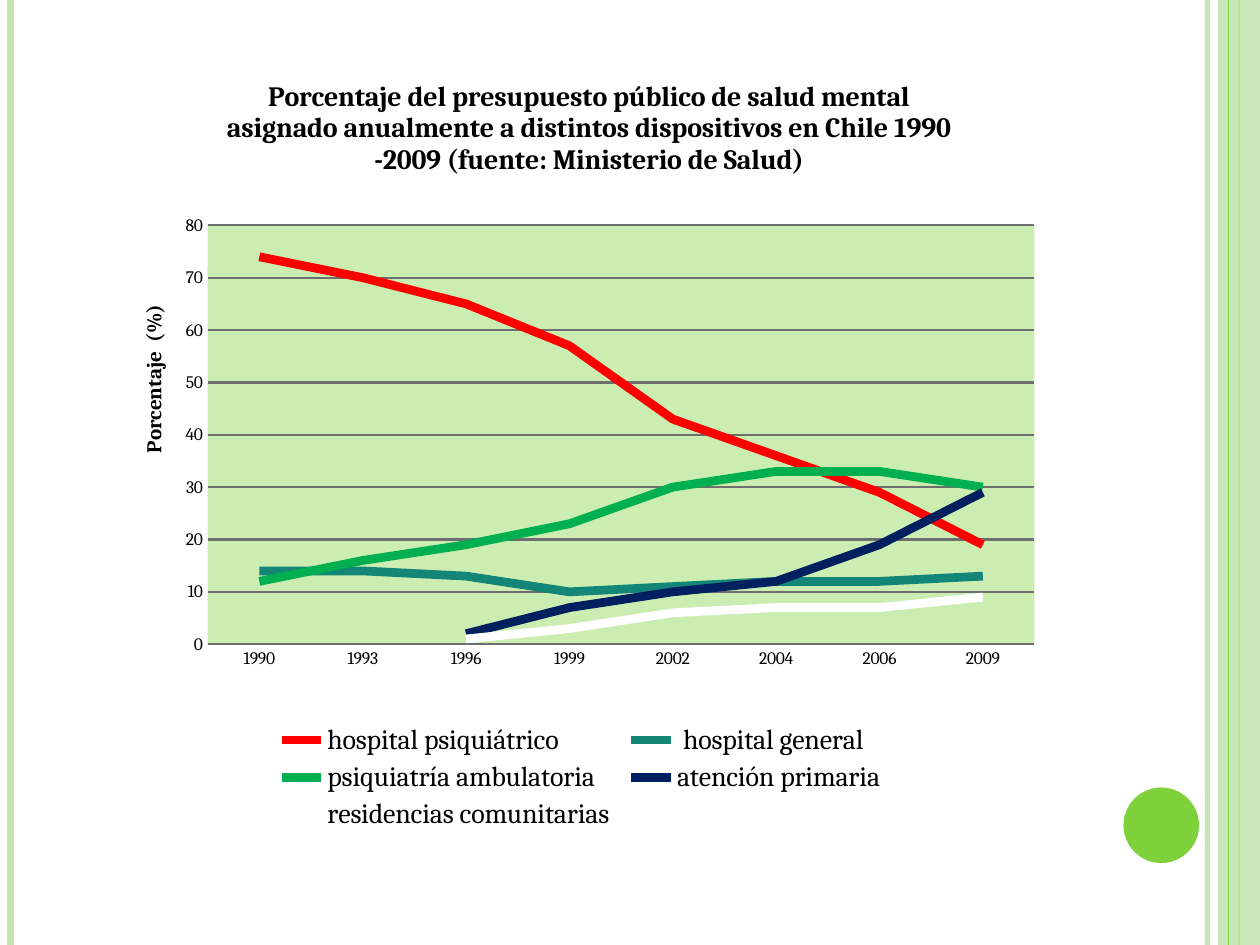
from lxml import etree
from pptx import Presentation
from pptx.chart.data import CategoryChartData
from pptx.dml.color import RGBColor
from pptx.enum.chart import XL_CHART_TYPE, XL_LEGEND_POSITION, XL_MARKER_STYLE, XL_TICK_MARK
from pptx.enum.shapes import MSO_CONNECTOR, MSO_SHAPE
from pptx.oxml import parse_xml
from pptx.oxml.ns import qn
from pptx.util import Pt

LINE_CHART = XL_CHART_TYPE.LINE
BOTTOM = XL_LEGEND_POSITION.BOTTOM
NO_MARKER = XL_MARKER_STYLE.NONE
NO_TICK = XL_TICK_MARK.NONE
STRAIGHT = MSO_CONNECTOR.STRAIGHT
RECT, OVAL = MSO_SHAPE.RECTANGLE, MSO_SHAPE.OVAL

WIDTH, HEIGHT = 720, 540
FONT = "Cambria"
COLORS = {
    "pale": "C0E5AF", "green": "7FD13B", "plot": "CCEDB1", "grid": "6E6E6E",
    "text": "000000", "red": "FF0000", "teal": "138677", "leaf": "00B050",
    "navy": "002060", "white": "FFFFFF",
}
NS = ('xmlns:c="http://schemas.openxmlformats.org/drawingml/2006/chart" '
      'xmlns:a="http://schemas.openxmlformats.org/drawingml/2006/main"')

TITLE = ("Porcentaje del presupuesto público de salud mental asignado anualmente "
         "a distintos dispositivos en Chile 1990 -2009 (fuente: Ministerio de Salud)")
AXIS_TITLE = "Porcentaje  (%)"
YEARS = ["1990", "1993", "1996", "1999", "2002", "2004", "2006", "2009"]
SERVICES = [
    ("hospital psiquiátrico", "red", [74, 70, 65, 57, 43, 36, 29, 19]),
    (" hospital general", "teal", [14, 14, 13, 10, 11, 12, 12, 13]),
    ("psiquiatría ambulatoria", "leaf", [12, 16, 19, 23, 30, 33, 33, 30]),
    ("atención primaria", "navy", [None, None, 2, 7, 10, 12, 19, 29]),
    ("residencias comunitarias", "white", [None, None, 1, 3, 6, 7, 7, 9]),
]


class SlideBuilder:
    def __init__(self, slide):
        self.slide = slide

    def color(self, key):
        return RGBColor.from_string(COLORS[key])

    def font(self, font, size, bold=False):
        font.name, font.size, font.bold = FONT, Pt(size), bold
        font.color.rgb = self.color("text")

    def opacity(self, element, percent):
        rgb = next(element.iter(qn("a:srgbClr")))
        etree.SubElement(rgb, qn("a:alpha")).set("val", str(percent * 1000))

    def stripe(self, x, width, key, percent=100):
        line = self.slide.shapes.add_connector(STRAIGHT, Pt(x), 0, Pt(x), Pt(HEIGHT))
        line.line.width = Pt(width)
        line.line.color.rgb = self.color(key)
        if percent < 100:
            self.opacity(line.line._ln, percent)
        etree.SubElement(line._element.spPr, qn("a:effectLst"))

    def shape(self, kind, x, y, w, h, key, percent=100):
        shape = self.slide.shapes.add_shape(kind, Pt(x), Pt(y), Pt(w), Pt(h))
        shape.shadow.inherit = False
        shape.fill.solid()
        shape.fill.fore_color.rgb = self.color(key)
        shape.line.fill.background()
        if percent < 100:
            self.opacity(shape._element.spPr, percent)

    def layout(self, parent, index, x, y, w=None, h=None, target=""):
        """Place a chart part by fractions of the chart area."""
        for old in parent.findall(qn("c:layout")):
            parent.remove(old)
        inner = f'<c:layoutTarget val="{target}"/>' if target else ""
        inner += '<c:xMode val="edge"/><c:yMode val="edge"/>'
        for tag, value in zip("xywh", (x, y, w, h)):
            if value is not None:
                inner += f'<c:{tag} val="{value}"/>'
        parent.insert(index, parse_xml(
            f"<c:layout {NS}><c:manualLayout>{inner}</c:manualLayout></c:layout>"))

    def title(self, title, text, size, x, y):
        frame = title.text_frame
        frame.text = text
        self.font(frame.paragraphs[0].runs[0].font, size, bold=True)
        self.layout(title._element, 1, x, y)

    def line_chart(self, x, y, w, h):
        data = CategoryChartData()
        data.categories = YEARS
        for name, _, values in SERVICES:
            data.add_series(name, values)
        chart = self.slide.shapes.add_chart(
            LINE_CHART, Pt(x), Pt(y), Pt(w), Pt(h), data).chart
        self.font(chart.font, 10)
        chart.has_title = True
        self.title(chart.chart_title, TITLE, 16, 0.12, 0.03)

        # Axes
        years, percent = chart.category_axis, chart.value_axis
        for axis in (years, percent):
            axis.major_tick_mark = axis.minor_tick_mark = NO_TICK
        years.format.line.color.rgb = self.color("grid")
        percent.minimum_scale, percent.maximum_scale, percent.major_unit = 0, 80, 10
        percent.format.line.fill.background()
        grid = percent.major_gridlines.format.line
        grid.color.rgb, grid.width = self.color("grid"), Pt(1.25)
        percent.has_title = True
        self.title(percent.axis_title, AXIS_TITLE, 12, 0.03, 0.32)
        body = percent.axis_title.text_frame._txBody.bodyPr
        body.set("rot", "-5400000")
        body.set("vert", "horz")

        # Series
        chart.plots[0].vary_by_categories = False
        for series, (_, key, _) in zip(chart.plots[0].series, SERVICES):
            series.smooth = False
            series.marker.style = NO_MARKER
            series.format.line.color.rgb = self.color(key)
            series.format.line.width = Pt(5)

        # Plot area and legend
        plot_area = chart._chartSpace.chart.plotArea
        self.layout(plot_area, 0, 0.105, 0.224, 0.875, 0.532, "inner")
        plot_area.append(parse_xml(
            f'<c:spPr {NS}><a:solidFill><a:srgbClr val="{COLORS["plot"]}"/>'
            '</a:solidFill><a:ln><a:noFill/></a:ln></c:spPr>'))
        chart.has_legend = True
        chart.legend.position = BOTTOM
        chart.legend.include_in_layout = False
        self.font(chart.legend.font, 16)
        self.layout(chart.legend._element, 1, 0.17, 0.85, 0.66, 0.15)


def main():
    prs = Presentation()
    prs.slide_width, prs.slide_height = Pt(WIDTH), Pt(HEIGHT)
    builder = SlideBuilder(prs.slides.add_slide(prs.slide_layouts[6]))

    # Side bands and the round badge
    builder.stripe(690, 3, "pale", 93)
    builder.stripe(6, 4.5, "pale")
    builder.stripe(708, 1.5, "green")
    builder.shape(RECT, 696, 0, 24, HEIGHT, "pale", 87)
    builder.stripe(702, 0.75, "green")
    builder.shape(OVAL, 642, 450, 43.2, 43.2, "green")

    # Budget share by service
    builder.line_chart(62, 28, 540, 450)
    prs.save("out.pptx")


if __name__ == "__main__":
    main()
